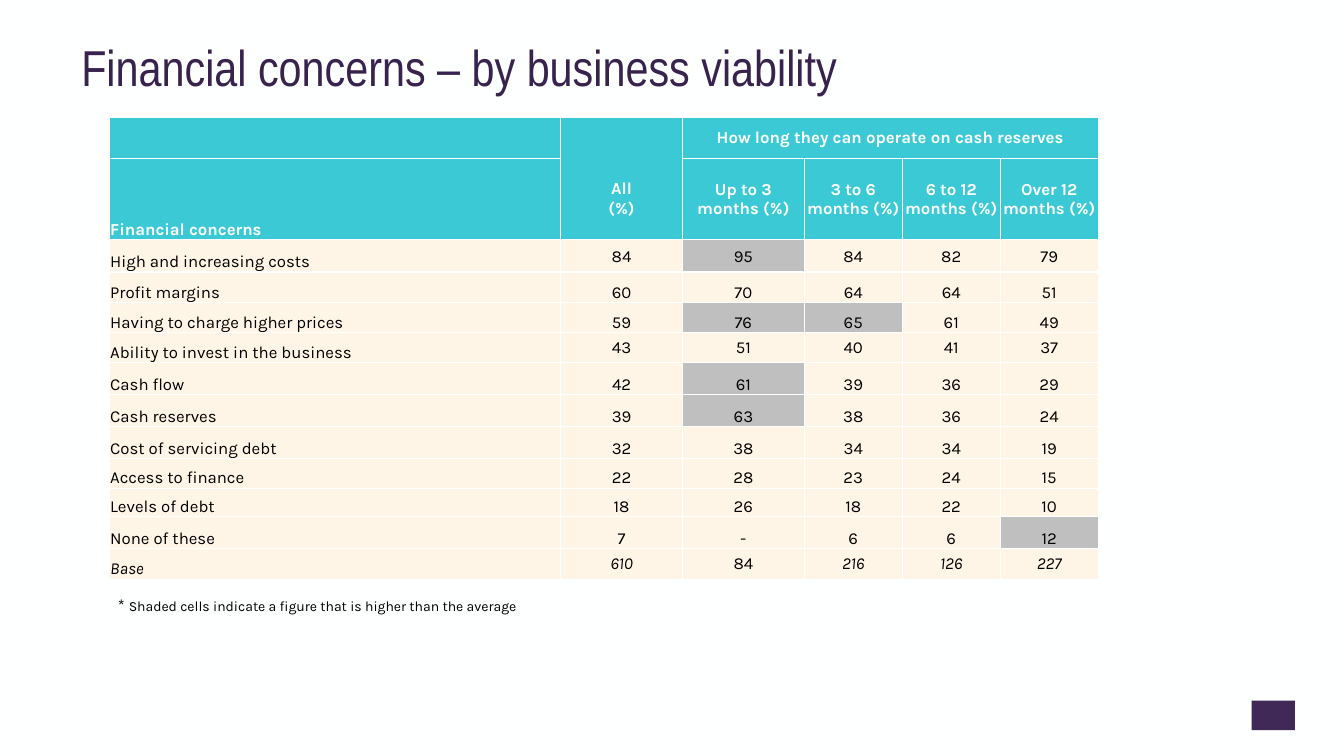
from dataclasses import dataclass

from lxml import etree
from pptx import Presentation
from pptx.dml.color import RGBColor
from pptx.enum import shapes, text
from pptx.oxml import ns
from pptx.util import Pt

WHITE, TEAL, CREAM, GREY, PURPLE = "FEFFFF", "3BC9D5", "FFF5E7", "BFBFBF", "402957"
BLACK, TITLE = "000000", "38234E"
MIDDLE, BOTTOM = text.MSO_ANCHOR.MIDDLE, text.MSO_ANCHOR.BOTTOM


@dataclass
class Concern:
    height: float
    label: str
    figures: str
    shaded: tuple = ()
    anchor: text.MSO_ANCHOR = BOTTOM
    italic: bool = False


COL_WIDTHS = [322.5, 87, 87, 70, 70, 70]
HEADER_HEIGHTS = [29.5, 57.5]
PERIODS = ["Up to 3 months (%)", "3 to 6 months (%)", "6 to 12 months (%)", "Over 12 months (%)"]
CONCERNS = [
    Concern(23, "High and increasing costs", "84 95 84 82 79", (2,), MIDDLE),
    Concern(22, "Profit margins", "60 70 64 64 51"),
    Concern(21.5, "Having to charge higher prices", "59 76 65 61 49", (2, 3)),
    Concern(21, "Ability to invest in the business", "43 51 40 41 37", (), MIDDLE),
    Concern(23, "Cash flow", "42 61 39 36 29", (2,)),
    Concern(23, "Cash reserves", "39 63 38 36 24", (2,)),
    Concern(23, "Cost of servicing debt", "32 38 34 34 19"),
    Concern(21, "Access to finance", "22 28 23 24 15"),
    Concern(20.5, "Levels of debt", "18 26 18 22 10"),
    Concern(22.5, "None of these", "7 - 6 6 12", (5,)),
    Concern(22, "Base", "610 84 216 126 227", (), MIDDLE, True),
]


def rgb(value: str) -> RGBColor:
    return RGBColor.from_string(value)


def style(font, name: str, size: float, color: str, bold=False, italic=False) -> None:
    font.name, font.size, font.bold, font.italic = name, Pt(size), bold, italic
    font.color.rgb = rgb(color)


def add_borders(cell) -> None:
    tc_pr = cell._tc.get_or_add_tcPr()
    for index, side in enumerate(("lnL", "lnR", "lnT", "lnB")):
        ln = etree.Element(ns.qn(f"a:{side}"), w=str(Pt(1)))
        fill = etree.SubElement(ln, ns.qn("a:solidFill"))
        etree.SubElement(fill, ns.qn("a:srgbClr"), val=WHITE)
        tc_pr.insert(index, ln)


def fill_cell(cell, words: str, fill: str, color: str, anchor=MIDDLE, centred=True,
              bold=False, italic=False, top=0.7) -> None:
    cell.fill.solid()
    cell.fill.fore_color.rgb = rgb(fill)
    add_borders(cell)
    cell.margin_left = cell.margin_right = Pt(0.7)
    cell.margin_top, cell.margin_bottom = Pt(top), Pt(0)
    cell.vertical_anchor = anchor
    cell.text_frame.text = words
    for p in cell.text_frame.paragraphs:
        p.alignment = text.PP_ALIGN.CENTER if centred else text.PP_ALIGN.LEFT
        style(p.font, "Karla", 12, color, bold, italic)
        for r in p.runs:
            style(r.font, "Karla", 12, color, bold, italic)


def add_title(s) -> None:
    tf = s.shapes.add_textbox(Pt(51), Pt(24), Pt(817), Pt(52)).text_frame
    tf.word_wrap = True
    tf.vertical_anchor = MIDDLE
    tf.text = "Financial concerns – by business viability"
    p = tf.paragraphs[0]
    p.line_spacing = 0.9
    style(p.runs[0].font, "Arial Narrow", 36, TITLE)


def add_concerns_table(s) -> None:
    heights = HEADER_HEIGHTS + [c.height for c in CONCERNS]
    table = s.shapes.add_table(len(heights), len(COL_WIDTHS), Pt(78), Pt(83.5),
                               Pt(sum(COL_WIDTHS)), Pt(sum(heights))).table
    table.horz_banding = False
    for column, width in zip(table.columns, COL_WIDTHS):
        column.width = Pt(width)
    for row, height in zip(table.rows, heights):
        row.height = Pt(height)

    for r in range(len(HEADER_HEIGHTS)):
        for c in range(len(COL_WIDTHS)):
            fill_cell(table.cell(r, c), "", TEAL, WHITE, bold=True)
    table.cell(0, 1).merge(table.cell(1, 1))
    table.cell(0, 2).merge(table.cell(0, 5))
    headings = [(0, 1, "All\n(%)", MIDDLE, True, 29.5),
                (0, 2, "How long they can operate on cash reserves", MIDDLE, True, 0.7),
                (1, 0, "Financial concerns", BOTTOM, False, 0.7)]
    headings += [(1, c, words, MIDDLE, True, 0.7) for c, words in enumerate(PERIODS, 2)]
    for r, c, words, anchor, centred, top in headings:
        cell = table.cell(r, c)
        for ln in list(cell._tc.tcPr):
            cell._tc.tcPr.remove(ln)
        fill_cell(cell, words, TEAL, WHITE, anchor, centred, bold=True, top=top)

    for r, concern in enumerate(CONCERNS, len(HEADER_HEIGHTS)):
        fill_cell(table.cell(r, 0), concern.label, CREAM, BLACK, BOTTOM, False,
                  italic=concern.italic)
        for c, figure in enumerate(concern.figures.split(), 1):
            fill_cell(table.cell(r, c), figure, GREY if c in concern.shaded else CREAM, BLACK,
                      concern.anchor, italic=concern.italic and c != 2)


def add_footnote(s) -> None:
    tf = s.shapes.add_textbox(Pt(83.5), Pt(430), Pt(700.5), Pt(18.5)).text_frame
    tf.word_wrap = True
    tf.margin_left, tf.margin_top = Pt(0.7), Pt(0.7)
    tf.margin_right = tf.margin_bottom = Pt(0)
    p = tf.paragraphs[0]
    p.line_spacing = Pt(8.2)
    for words, size in (("* ", 12),
                        ("Shaded cells indicate a figure that is higher than the average", 10)):
        r = p.add_run()
        r.text = words
        style(r.font, "Karla", size, BLACK)


def add_corner_block(s) -> None:
    sp = s.shapes.add_shape(shapes.MSO_SHAPE.RECTANGLE, Pt(894), Pt(500.5), Pt(31), Pt(21))
    sp.shadow.inherit = False
    sp.fill.solid()
    sp.fill.fore_color.rgb = rgb(PURPLE)
    sp.line.fill.background()


def main() -> None:
    prs = Presentation()
    prs.slide_width, prs.slide_height = Pt(960), Pt(540)
    s = prs.slides.add_slide(prs.slide_layouts[6])
    s.background.fill.solid()
    s.background.fill.fore_color.rgb = rgb(WHITE)
    add_corner_block(s)
    add_title(s)
    add_concerns_table(s)
    add_footnote(s)
    prs.save("out.pptx")


if __name__ == "__main__":
    main()
